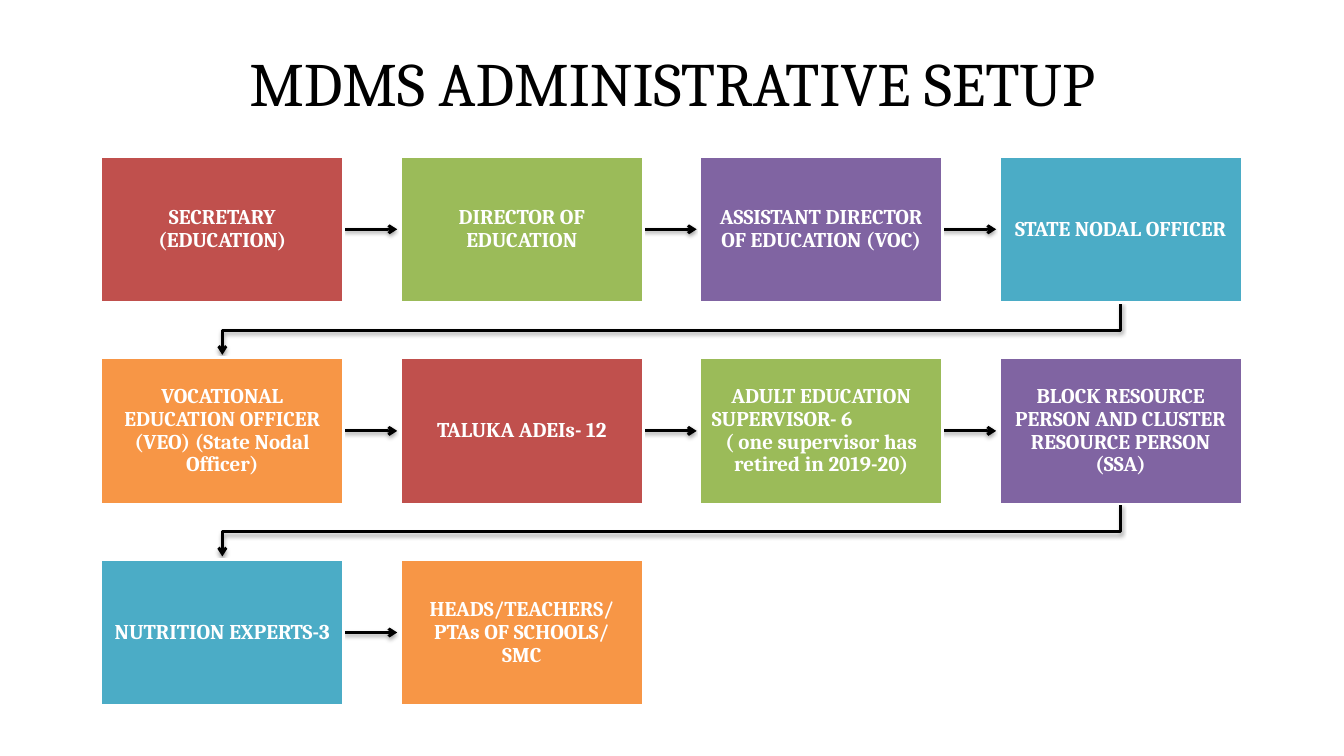
from lxml import etree
from pptx import Presentation
from pptx.dml.color import RGBColor
from pptx.enum.shapes import MSO_CONNECTOR, MSO_SHAPE
from pptx.enum.text import MSO_ANCHOR, PP_ALIGN
from pptx.oxml import parse_xml
from pptx.oxml.ns import nsdecls, qn
from pptx.util import Inches, Pt

FONT = "Cambria"
RED, GREEN, PURPLE, TEAL, ORANGE = "C0504D", "9BBB59", "8064A2", "4BACC6", "F79646"
PALETTE = [RED, GREEN, PURPLE, TEAL, ORANGE]
COLUMNS = 4
LEFT, TOP = 1.0, 1.55
COLUMN_STEP, ROW_STEP = 2.97, 2.0
BOX_WIDTH, BOX_HEIGHT = 2.41, 1.45
ARROW_GAP = 0.03

CENTER, FLUSH_LEFT = PP_ALIGN.CENTER, PP_ALIGN.LEFT
OFFICES = [
    [("SECRETARY (EDUCATION)", CENTER)],
    [("DIRECTOR OF EDUCATION", CENTER)],
    [("ASSISTANT DIRECTOR OF EDUCATION (VOC)", CENTER)],
    [("STATE NODAL OFFICER", CENTER)],
    [("VOCATIONAL EDUCATION OFFICER (VEO) (State Nodal Officer)", CENTER)],
    [("TALUKA ADEIs- 12", CENTER)],
    [
        ("ADULT EDUCATION", CENTER),
        ("SUPERVISOR- 6", FLUSH_LEFT),
        ("( one supervisor has retired in 2019-20)", CENTER),
    ],
    [("BLOCK RESOURCE PERSON AND CLUSTER RESOURCE PERSON (SSA)", CENTER)],
    [("NUTRITION EXPERTS-3", CENTER)],
    [("HEADS/TEACHERS/ PTAs OF SCHOOLS/ SMC", CENTER)],
]


def rgb(value):
    return RGBColor.from_string(value)


def box_corner(index):
    row, column = divmod(index, COLUMNS)
    return LEFT + column * COLUMN_STEP, TOP + row * ROW_STEP


def write_paragraph(paragraph, text, align, size, color, bold=False):
    paragraph.text = text
    paragraph.alignment = align
    paragraph.font.name = FONT
    paragraph.font.size = Pt(size)
    paragraph.font.bold = bold
    paragraph.font.color.rgb = rgb(color)


def add_title(slide, text):
    title = slide.shapes.add_textbox(Inches(0.67), Inches(0.3), Inches(12), Inches(1.03))
    frame = title.text_frame
    frame.word_wrap = True
    frame.vertical_anchor = MSO_ANCHOR.MIDDLE
    write_paragraph(frame.paragraphs[0], text, CENTER, 44, "000000")


def style_arrow(arrow):
    arrow.line.color.rgb = rgb("000000")
    arrow.line.width = Pt(2)
    properties = arrow._element.spPr
    etree.SubElement(properties.find(qn("a:ln")), qn("a:tailEnd"), type="arrow")
    properties.append(parse_xml(
        f'<a:effectLst {nsdecls("a")}>'
        '<a:outerShdw blurRad="40000" dist="20000" dir="5400000" rotWithShape="0">'
        '<a:srgbClr val="000000"><a:alpha val="38000"/></a:srgbClr>'
        '</a:outerShdw></a:effectLst>'
    ))


def add_next_arrow(slide, index):
    left, top = box_corner(index)
    middle = Inches(top + BOX_HEIGHT / 2)
    arrow = slide.shapes.add_connector(
        MSO_CONNECTOR.STRAIGHT,
        Inches(left + BOX_WIDTH), middle,
        Inches(left + COLUMN_STEP - ARROW_GAP), middle,
    )
    style_arrow(arrow)


def add_row_arrow(slide, index):
    left, top = box_corner(index)
    next_left, next_top = box_corner(index + 1)
    start_x, end_x = left + BOX_WIDTH / 2, next_left + BOX_WIDTH / 2
    start_y, end_y = top + BOX_HEIGHT, next_top - ARROW_GAP
    turn_y = (top + BOX_HEIGHT + next_top) / 2
    builder = slide.shapes.build_freeform(Inches(start_x), Inches(start_y))
    turns = [(start_x, turn_y), (end_x, turn_y), (end_x, end_y)]
    builder.add_line_segments([(Inches(x), Inches(y)) for x, y in turns], close=False)
    arrow = builder.convert_to_shape()
    arrow.fill.background()
    style_arrow(arrow)


def add_office(slide, index, lines):
    left, top = box_corner(index)
    office = slide.shapes.add_shape(
        MSO_SHAPE.RECTANGLE, Inches(left), Inches(top), Inches(BOX_WIDTH), Inches(BOX_HEIGHT)
    )
    office.shadow.inherit = False
    office.fill.solid()
    office.fill.fore_color.rgb = rgb(PALETTE[index % len(PALETTE)])
    office.line.color.rgb = rgb("FFFFFF")
    office.line.width = Pt(2)
    frame = office.text_frame
    frame.word_wrap = True
    frame.vertical_anchor = MSO_ANCHOR.MIDDLE
    frame.margin_left = frame.margin_right = Inches(0.12)
    frame.margin_top = frame.margin_bottom = Inches(0.12)
    for position, (text, align) in enumerate(lines):
        paragraph = frame.add_paragraph() if position else frame.paragraphs[0]
        write_paragraph(paragraph, text, align, 15, "FFFFFF", bold=True)
        paragraph.line_spacing = 0.9


def main():
    deck = Presentation()
    deck.slide_width, deck.slide_height = Inches(13.33), Inches(7.5)
    slide = deck.slides.add_slide(deck.slide_layouts[6])
    add_title(slide, "MDMS ADMINISTRATIVE SETUP")
    for index in range(len(OFFICES) - 1):
        ends_row = index % COLUMNS == COLUMNS - 1
        add_arrow = add_row_arrow if ends_row else add_next_arrow
        add_arrow(slide, index)
    for index, lines in enumerate(OFFICES):
        add_office(slide, index, lines)
    deck.save("out.pptx")


if __name__ == "__main__":
    main()
